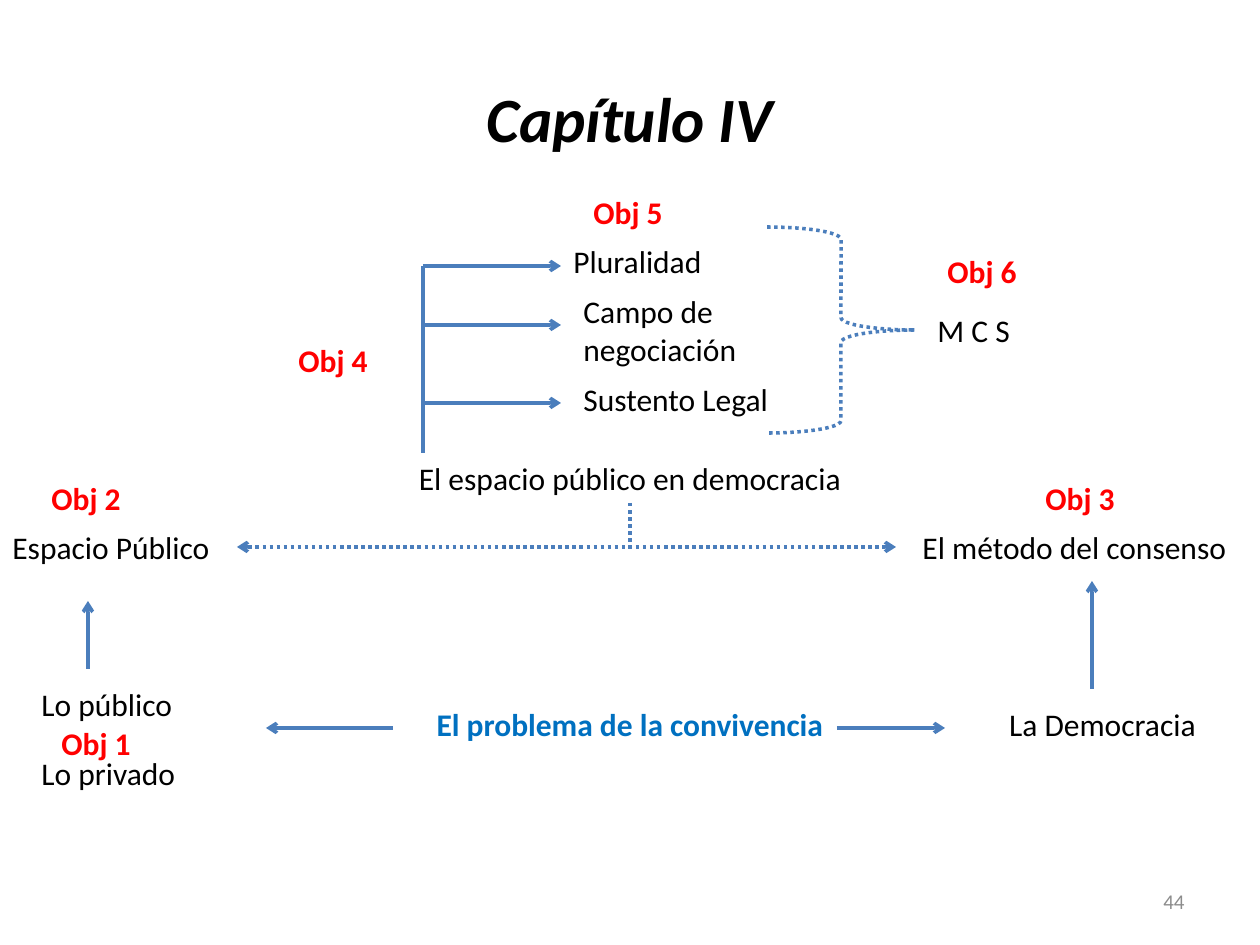
from lxml.etree import SubElement
from pptx import Presentation
from pptx.dml.color import RGBColor
from pptx.enum.dml import MSO_LINE
from pptx.enum.shapes import MSO_CONNECTOR, MSO_SHAPE
from pptx.enum.text import MSO_ANCHOR, MSO_AUTO_SIZE, PP_ALIGN
from pptx.oxml.ns import qn
from pptx.util import Emu, Pt

PX = 914400 / 126
THEME = {
    "font": "Calibri",
    "text": RGBColor(0, 0, 0),
    "objective": RGBColor(255, 0, 0),
    "problem": RGBColor(0, 112, 192),
    "number": RGBColor(140, 140, 140),
    "line": RGBColor(75, 126, 188),
    "title_size": Pt(36),
    "body_size": Pt(18),
    "number_size": Pt(12),
    "line_width": Pt(2),
}
LEFT, CENTER, RIGHT = PP_ALIGN.LEFT, PP_ALIGN.CENTER, PP_ALIGN.RIGHT
ROW = 50


def write(shape, text, align, color="text", size="body_size", **styles):
    paragraph = shape.text_frame.paragraphs[0]
    paragraph.text = text
    paragraph.alignment = align
    paragraph.font.color.rgb = THEME[color]
    formats = {"name": THEME["font"], "size": THEME[size], **styles}
    for name, value in formats.items():
        setattr(paragraph.runs[0].font, name, value)
    paragraph.runs[0].font.color.rgb = THEME[color]


def style_line(shape, dotted):
    shape.line.color.rgb = THEME["line"]
    shape.line.width = THEME["line_width"]
    if dotted:
        shape.line.dash_style = MSO_LINE.ROUND_DOT


presentation = Presentation()
presentation.slide_width = Emu(round(1260 * PX))
presentation.slide_height = Emu(round(945 * PX))
slide = presentation.slides.add_slide(presentation.slide_layouts[5])

title = slide.shapes.title
title_format = {"left": 63, "top": 38, "width": 1134, "height": 158}
for name, value in title_format.items():
    setattr(title, name, Emu(round(value * PX)))
title.text_frame.vertical_anchor = MSO_ANCHOR.MIDDLE
write(title, "Capítulo IV", CENTER, size="title_size", bold=True, italic=True)

objective = {"color": "objective", "bold": True}
labels = [
    ("El problema de la convivencia", 0, 699, 1260, ROW, CENTER, {"color": "problem", "bold": True}),
    ("Lo público", 29, 679, 168, ROW, LEFT, {}),
    ("Lo privado", 29, 748, 168, ROW, LEFT, {}),
    ("Espacio Público", 0, 522, 237, ROW, LEFT, {}),
    ("La Democracia", 945, 699, 315, ROW, CENTER, {}),
    ("El método del consenso ", 896, 522, 364, ROW, CENTER, {}),
    ("El espacio público en democracia", 0, 453, 1260, ROW, CENTER, {}),
    ("Pluralidad", 561, 236, 168, ROW, LEFT, {}),
    ("Campo de negociación", 571, 286, 197, 89, LEFT, {}),
    ("Sustento Legal", 571, 374, 227, ROW, LEFT, {}),
    ("M C S", 925, 305, 108, ROW, LEFT, {}),
    ("Obj 1", 49, 718, 108, ROW, LEFT, objective),
    ("Obj 2", 39, 473, 98, ROW, LEFT, objective),
    ("Obj 3", 1033, 473, 118, ROW, LEFT, objective),
    ("Obj 4", 286, 335, 108, ROW, LEFT, objective),
    ("Obj 5", 581, 187, 129, ROW, LEFT, objective),
    ("Obj 6", 935, 246, 98, ROW, LEFT, objective),
    ("44", 903, 876, 294, ROW, RIGHT, {"color": "number", "size": "number_size"}),
]
boxes = {}
for text, left, top, width, height, align, styles in labels:
    position = [Emu(round(value * PX)) for value in (left, top, width, height)]
    box = slide.shapes.add_textbox(*position)
    box.text_frame.word_wrap = True
    box.text_frame.auto_size = MSO_AUTO_SIZE.SHAPE_TO_FIT_TEXT
    write(box, text, align, **styles)
    boxes[text] = box
boxes["44"].text_frame.auto_size = MSO_AUTO_SIZE.NONE
boxes["44"].text_frame.vertical_anchor = MSO_ANCHOR.MIDDLE

brace_position = [Emu(round(value * PX)) for value in (767, 227, 148, 206)]
brace = slide.shapes.add_shape(MSO_SHAPE.RIGHT_BRACE, *brace_position)
brace.shadow.inherit = False
brace.fill.background()
style_line(brace, True)

public_space = (boxes["Espacio Público"], 3)
consensus = (boxes["El método del consenso "], 1)
democratic_space = (boxes["El espacio público en democracia"], 2)
branches = [(423, y, 561, y, ["tailEnd"], False, None, None) for y in (266, 325, 403)]
connectors = [
    (393, 728, 266, 728, ["tailEnd"], False, None, None),
    (88, 669, 88, 601, ["tailEnd"], False, None, None),
    (837, 728, 945, 728, ["tailEnd"], False, None, None),
    (1092, 689, 1092, 581, ["tailEnd"], False, None, None),
    (237, 547, 896, 547, ["headEnd", "tailEnd"], True, public_space, consensus),
    (630, 503, 630, 552, [], True, democratic_space, None),
    (423, 453, 423, 266, [], False, None, None),
    *branches,
]
for x1, y1, x2, y2, arrows, dotted, start, end in connectors:
    points = [Emu(round(value * PX)) for value in (x1, y1, x2, y2)]
    connector = slide.shapes.add_connector(MSO_CONNECTOR.STRAIGHT, *points)
    if start:
        connector.begin_connect(*start)
    if end:
        connector.end_connect(*end)
    style_line(connector, dotted)
    for arrow in arrows:
        SubElement(connector.line._get_or_add_ln(), qn(f"a:{arrow}"), type="arrow")
    SubElement(connector._element.spPr, qn("a:effectLst"))

presentation.save("out.pptx")
